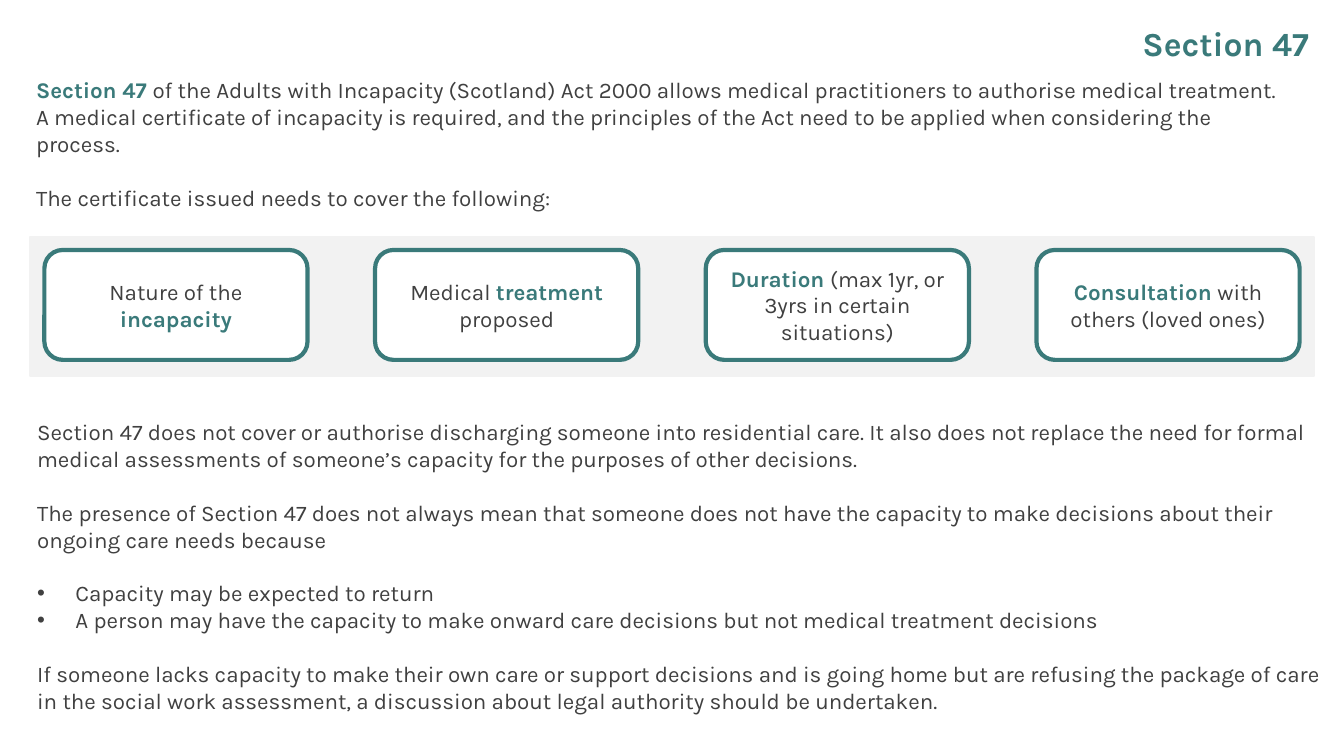
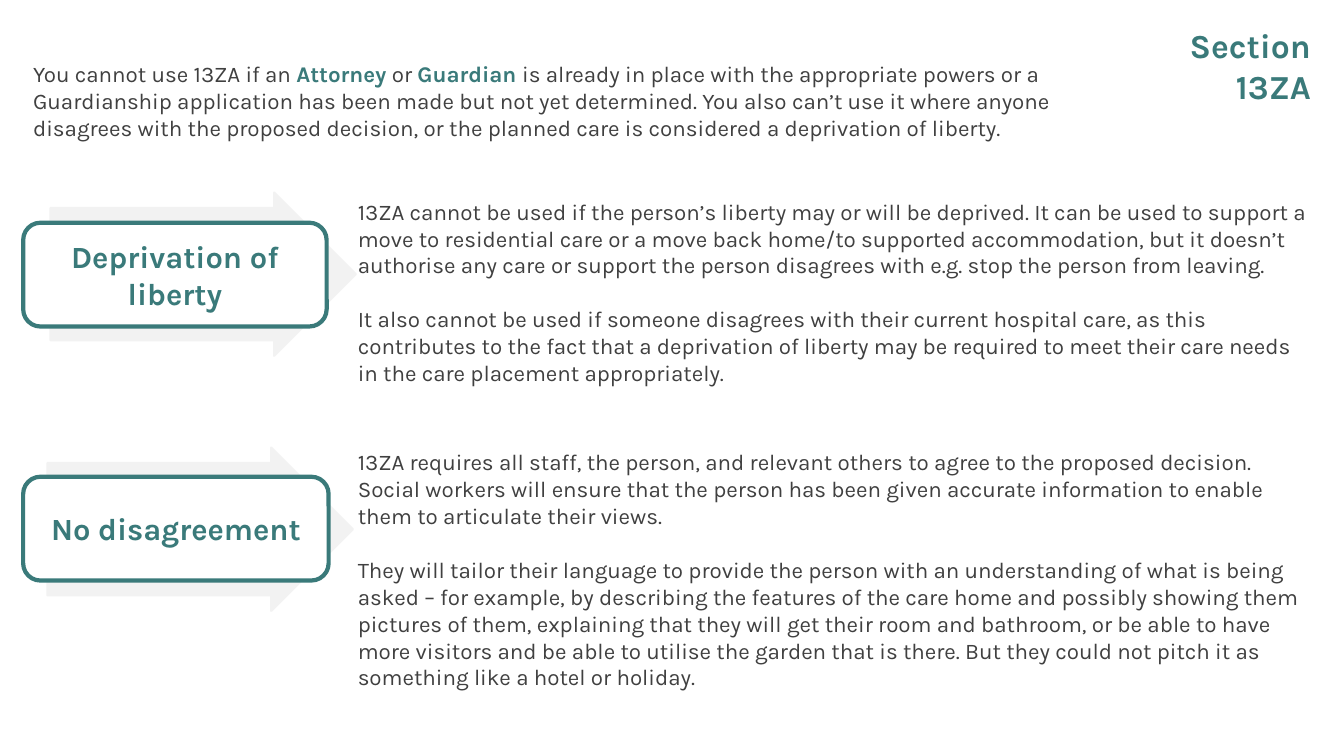
"""Build two slides on Section 47 and Section 13ZA."""
from lxml.etree import SubElement
from pptx import Presentation
from pptx.dml.color import RGBColor
from pptx.enum.shapes import MSO_SHAPE as Shape
from pptx.enum.text import MSO_ANCHOR as Anchor, PP_ALIGN as Align
from pptx.oxml.ns import qn
from pptx.util import Inches, Pt

TEAL = RGBColor(0x3A, 0x7A, 0x7A)
DARK = RGBColor(0x40, 0x40, 0x40)
PALE = RGBColor(0xF2, 0xF2, 0xF2)
WHITE = RGBColor(0xFF, 0xFF, 0xFF)
FONT = "Karla"
BULLET = "• "
LINE_GAP = Pt(19.2)


def add_text(shape, texts, size=16, color=DARK, bold=False, align=Align.LEFT, anchor=Anchor.MIDDLE):
    """Write paragraphs; words between asterisks become bold teal."""
    frame = shape.text_frame
    frame.word_wrap = True
    frame.vertical_anchor = anchor
    after_bullet = False
    for index, text in enumerate(texts):
        paragraph = frame.add_paragraph() if index else frame.paragraphs[0]
        is_bullet = text.startswith(BULLET)
        if is_bullet:
            properties = paragraph._p.get_or_add_pPr()
            properties.set("marL", str(Inches(0.38)))
            properties.set("indent", str(-Inches(0.38)))
            SubElement(properties, qn("a:buFont"), typeface="Arial")
            SubElement(properties, qn("a:buChar"), char=BULLET.strip())
        if index and not (is_bullet and after_bullet):
            paragraph.space_before = LINE_GAP
        after_bullet = is_bullet
        paragraph.alignment = align
        paragraph.font.name = FONT
        paragraph.font.size = Pt(size)
        paragraph.font.bold = bold
        paragraph.font.color.rgb = color
        for part, words in enumerate(text.removeprefix(BULLET).split("*")):
            if words:
                run = paragraph.add_run()
                run.text = words
                if part % 2:
                    run.font.bold = True
                    run.font.color.rgb = TEAL


def add_panel(slide, kind, box, fill, line, width):
    """Add a filled, outlined shape without a shadow."""
    shape = slide.shapes.add_shape(kind, *map(Inches, box))
    shape.shadow.inherit = False
    shape.fill.solid()
    shape.fill.fore_color.rgb = fill
    shape.line.color.rgb = line
    shape.line.width = Pt(width)
    return shape


presentation = Presentation()
presentation.slide_width = Inches(13.33)
presentation.slide_height = Inches(7.5)
blank = presentation.slide_layouts[6]
section_47 = presentation.slides.add_slide(blank)
section_13za = presentation.slides.add_slide(blank)

titles = [
    (section_47, "Section 47", (7.31, 0.18, 5.77, 0.5)),
    (section_13za, "Section 13ZA", (10.89, 0.2, 2.21, 0.9)),
]
for slide, title, box in titles:
    title_box = slide.shapes.add_textbox(*map(Inches, box))
    add_text(title_box, [title], 24, TEAL, True, Align.RIGHT, Anchor.TOP)

add_panel(section_47, Shape.RECTANGLE, (0.3, 2.35, 12.73, 1.38), PALE, PALE, 1.5)
certificate_items = [
    "Nature of the *incapacity*",
    "Medical *treatment *proposed",
    "*Duration *(max 1yr, or 3yrs in certain situations)",
    "*Consultation *with others (loved ones)",
]
for column, item in enumerate(certificate_items):
    card_box = (0.44 + 3.28 * column, 2.48, 2.61, 1.09)
    card = add_panel(section_47, Shape.ROUNDED_RECTANGLE, card_box, WHITE, TEAL, 3)
    add_text(card, [item], align=Align.CENTER)

conditions = [
    ("Deprivation of liberty", (0.5, 1.91), (0.23, 2.21, 3.01, 1.03)),
    ("No disagreement", (0.47, 4.44), (0.23, 4.73, 3.03, 1.03)),
]
for label, arrow_corner, label_box in conditions:
    arrow = add_panel(section_13za, Shape.RIGHT_ARROW, (*arrow_corner, 3.03, 1.62), PALE, PALE, 1.5)
    arrow.adjustments[0] = 0.81
    arrow.adjustments[1] = 0.5
    label_shape = add_panel(section_13za, Shape.ROUNDED_RECTANGLE, label_box, WHITE, TEAL, 3)
    add_text(label_shape, [label], 22, TEAL, True, Align.CENTER)

body_texts = [
    (section_47, (0.26, 0.41, 12.59, 2.03), Anchor.MIDDLE, [
        "*Section 47 *of the Adults with Incapacity (Scotland) Act 2000 allows medical practitioners to "
        "authorise medical treatment. A medical certificate of incapacity is required, and the principles "
        "of the Act need to be applied when considering the process.",
        "The certificate issued needs to cover the following:",
    ]),
    (section_47, (0.27, 4.1, 13.06, 3.1), Anchor.TOP, [
        "Section 47 does not cover or authorise discharging someone into residential care. It also does "
        "not replace the need for formal medical assessments of someone’s capacity for the purposes of "
        "other decisions.",
        "The presence of Section 47 does not always mean that someone does not have the capacity to make "
        "decisions about their ongoing care needs because",
        "• Capacity may be expected to return",
        "• A person may have the capacity to make onward care decisions but not medical treatment decisions",
        "If someone lacks capacity to make their own care or support decisions and is going home but are "
        "refusing the package of care in the social work assessment, a discussion about legal authority "
        "should be undertaken.",
    ]),
    (section_13za, (0.23, 0.55, 10.48, 0.91), Anchor.TOP, [
        "You cannot use 13ZA if an *Attorney* or *Guardian *is already in place with the appropriate "
        "powers or a Guardianship application has been made but not yet determined. You also can’t use it "
        "where anyone disagrees with the proposed decision, or the planned care is considered a "
        "deprivation of liberty.",
    ]),
    (section_13za, (3.45, 1.95, 9.65, 1.89), Anchor.MIDDLE, [
        "13ZA cannot be used if the person’s liberty may or will be deprived. It can be used to support a "
        "move to residential care or a move back home/to supported accommodation, but it doesn’t authorise "
        "any care or support the person disagrees with e.g. stop the person from leaving.",
        "It also cannot be used if someone disagrees with their current hospital care, as this contributes "
        "to the fact that a deprivation of liberty may be required to meet their care needs in the care "
        "placement appropriately.",
    ]),
    (section_13za, (3.45, 4.4, 9.65, 2.5), Anchor.MIDDLE, [
        "13ZA requires all staff, the person, and relevant others to agree to the proposed decision. Social "
        "workers will ensure that the person has been given accurate information to enable them to "
        "articulate their views.",
        "They will tailor their language to provide the person with an understanding of what is being asked "
        "– for example, by describing the features of the care home and possibly showing them pictures of "
        "them, explaining that they will get their room and bathroom, or be able to have more visitors and "
        "be able to utilise the garden that is there. But they could not pitch it as something like a hotel "
        "or holiday.",
    ]),
]
for slide, box, anchor, texts in body_texts:
    body_box = slide.shapes.add_textbox(*map(Inches, box))
    add_text(body_box, texts, anchor=anchor)

presentation.save("out.pptx")
